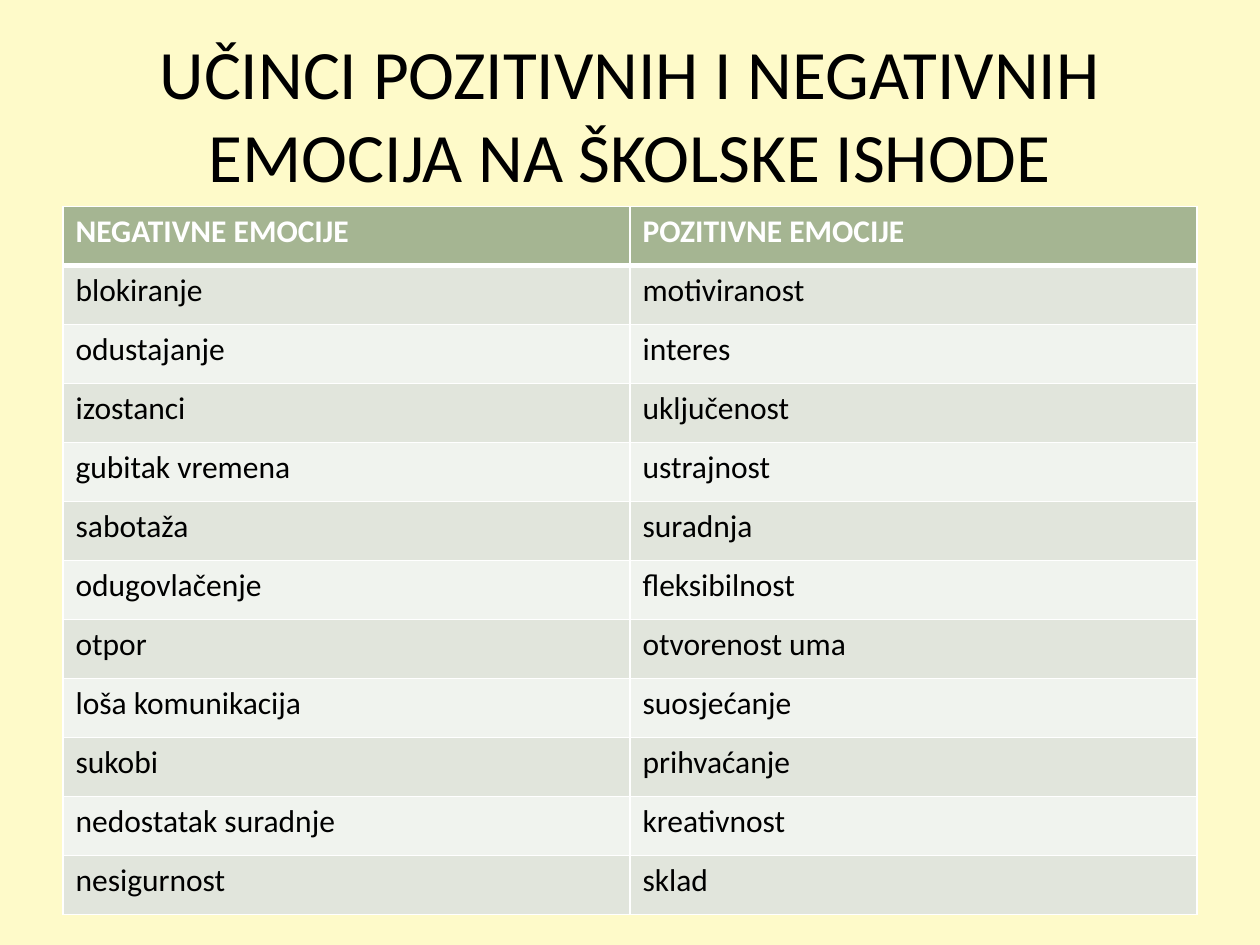
from dataclasses import dataclass

import lxml.etree
import pptx
import pptx.dml.color
import pptx.enum.text
import pptx.oxml.ns
import pptx.util

TITLE = "UČINCI POZITIVNIH I NEGATIVNIH EMOCIJA NA ŠKOLSKE ISHODE"
EMOTIONS = [
    ("NEGATIVNE EMOCIJE", "POZITIVNE EMOCIJE"),
    ("blokiranje", "motiviranost"),
    ("odustajanje", "interes"),
    ("izostanci", "uključenost"),
    ("gubitak vremena", "ustrajnost"),
    ("sabotaža", "suradnja"),
    ("odugovlačenje", "fleksibilnost"),
    ("otpor", "otvorenost uma"),
    ("loša komunikacija", "suosjećanje"),
    ("sukobi", "prihvaćanje"),
    ("nedostatak suradnje", "kreativnost"),
    ("nesigurnost", "sklad"),
]


@dataclass(frozen=True)
class Theme:
    font: str = "Calibri"
    background: str = "FEFAC9"
    text: str = "000000"
    header_text: str = "FFFFFF"
    header_fill: str = "A5B592"
    bands: tuple = ("E1E5DC", "F0F3EE")
    border: str = "FFFFFF"
    border_pt: float = 1
    header_rule_pt: float = 3
    title_pt: float = 39.6
    body_pt: float = 18


def rgb(value):
    return pptx.dml.color.RGBColor.from_string(value)


class Deck:
    """Holds the theme and current slide; lengths are shares of slide size."""

    def __init__(self, theme):
        self.theme = theme
        self.prs = pptx.Presentation()
        self.prs.slide_width = pptx.util.Inches(10)
        self.prs.slide_height = pptx.util.Inches(7.5)

    def slide(self):
        self.s = self.prs.slides.add_slide(self.prs.slide_layouts[6])
        fill = self.s.background.fill
        fill.solid()
        fill.fore_color.rgb = rgb(self.theme.background)

    def box(self, x, y, w, h):
        width, height = self.prs.slide_width, self.prs.slide_height
        return [round(v) for v in (x * width, y * height, w * width, h * height)]

    def run(self, p, text, size, color, bold=False):
        r = p.add_run()
        r.text = text
        r.font.name = self.theme.font
        r.font.size = pptx.util.Pt(size)
        r.font.bold = bold
        r.font.color.rgb = rgb(color)

    def title(self, text, *area):
        tf = self.s.shapes.add_textbox(*self.box(*area)).text_frame
        tf.word_wrap = True
        tf.vertical_anchor = pptx.enum.text.MSO_ANCHOR.MIDDLE
        p = tf.paragraphs[0]
        p.alignment = pptx.enum.text.PP_ALIGN.CENTER
        self.run(p, text, self.theme.title_pt, self.theme.text)

    def borders(self, cell, **widths):
        """Draw the cell's sides, given in schema order: L, R, T, B."""
        qn = pptx.oxml.ns.qn
        tc_pr = cell._tc.get_or_add_tcPr()
        for i, (side, width) in enumerate(widths.items()):
            ln = lxml.etree.Element(qn(f"a:ln{side}"), w=str(pptx.util.Pt(width)))
            fill = lxml.etree.SubElement(ln, qn("a:solidFill"))
            lxml.etree.SubElement(fill, qn("a:srgbClr"), val=self.theme.border)
            tc_pr.insert(i, ln)

    def table(self, rows, *area):
        th = self.theme
        x, y, w, h = self.box(*area)
        table = self.s.shapes.add_table(len(rows), len(rows[0]), x, y, w, h).table
        for i, row in enumerate(rows):
            header = i == 0
            fill = th.header_fill if header else th.bands[(i - 1) % 2]
            color = th.header_text if header else th.text
            top = th.header_rule_pt if i == 1 else th.border_pt
            bottom = th.header_rule_pt if header else th.border_pt
            for j, text in enumerate(row):
                cell = table.cell(i, j)
                cell.fill.solid()
                cell.fill.fore_color.rgb = rgb(fill)
                self.borders(cell, L=th.border_pt, R=th.border_pt, T=top, B=bottom)
                p = cell.text_frame.paragraphs[0]
                self.run(p, text, th.body_pt, color, bold=header)

    def save(self):
        self.prs.save("out.pptx")


def main():
    margin, title_top, table_top, table_bottom = 0.05, 0.16 / 7.5, 1.64 / 7.5, 7.26 / 7.5
    width = 1 - 2 * margin
    deck = Deck(Theme())
    deck.slide()
    deck.title(TITLE, margin, title_top, width, table_top - title_top)
    deck.table(EMOTIONS, margin, table_top, width, table_bottom - table_top)
    deck.save()


if __name__ == "__main__":
    main()
